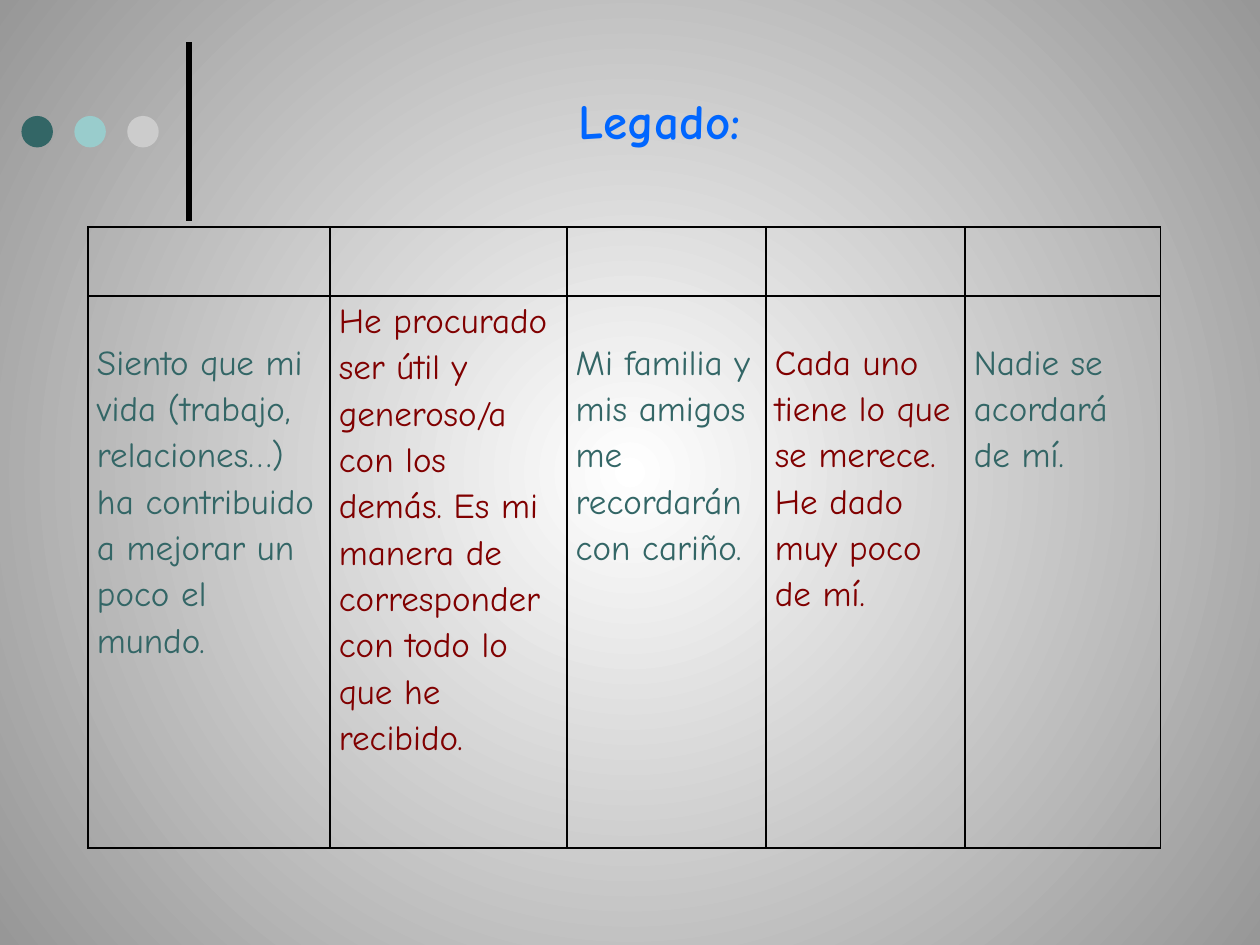
"""Build the "Legado" slide: a title, a dotted ornament and a five-column table."""
from lxml.etree import SubElement
from pptx import Presentation
from pptx.dml.color import RGBColor
from pptx.enum.shapes import MSO_CONNECTOR as Connector, MSO_SHAPE as Shape
from pptx.enum.text import MSO_ANCHOR as Anchor, PP_ALIGN as Align
from pptx.oxml import parse_xml
from pptx.oxml.ns import nsdecls, qn
from pptx.util import Inches, Pt

TEAL, MAROON, BLUE, BLACK = "336666", "800000", "0066FF", "000000"


def rgb(value):
    return RGBColor.from_string(value)


def write(frame, *lines, size=20, color=BLACK, bold=False, align=Align.LEFT, spacing=1.0):
    frame.word_wrap = True
    for index, line in enumerate(lines):
        para = frame.add_paragraph() if index else frame.paragraphs[0]
        para.alignment, para.line_spacing = align, spacing
        span = para.add_run()
        span.text = line
        span.font.name, span.font.size, span.font.bold = "Comic Neue", Pt(size), bold
        span.font.color.rgb = rgb(color)


deck = Presentation()
deck.slide_width, deck.slide_height = Inches(10), Inches(7.5)
page = deck.slides.add_slide(deck.slide_layouts[5])

backdrop = page.background.fill
backdrop.gradient()
for stop, (position, color) in zip(backdrop.gradient_stops, [(0, "FFFFFF"), (1, "979797")]):
    stop.position, stop.color.rgb = position, rgb(color)
linear = next(page.background._cSld.iter(qn("a:lin")))
linear.getparent().replace(linear, parse_xml(
    f'<a:path {nsdecls("a")} path="circle">'
    '<a:fillToRect l="50000" t="50000" r="50000" b="50000"/></a:path>'))

bar = page.shapes.add_connector(
    Connector.STRAIGHT, Inches(1.5), Inches(1.75), Inches(1.5), Inches(0.33))
bar.line.color.rgb, bar.line.width = rgb(BLACK), Pt(3)
SubElement(bar._element.spPr, qn("a:effectLst"))

for index, color in enumerate([TEAL, "99CCCC", "CCCCCC"]):
    dot = page.shapes.add_shape(
        Shape.OVAL, Inches(0.17 + 0.42 * index), Inches(0.92), Inches(0.25), Inches(0.25))
    dot.shadow.inherit = False
    dot.fill.solid()
    dot.fill.fore_color.rgb = rgb(color)
    dot.line.fill.background()

title = page.shapes.title
title.left, title.top, title.width, title.height = map(Inches, (0.47, 0.65, 9.53, 0.91))
title.text_frame.vertical_anchor = Anchor.TOP
title.text_frame.margin_top = Inches(0.07)
write(title.text_frame, "Legado:", size=28, color=BLUE, bold=True, align=Align.CENTER)

columns = [
    (1.92, 0.33, TEAL, ["Siento que mi vida (trabajo, relaciones…) ha contribuido "
                        "a mejorar un poco el mundo."]),
    (1.88, 0, MAROON, ["He procurado ser útil y generoso/a con los demás. Es mi manera "
                       "de corresponder con todo lo que he recibido."]),
    (1.58, 0.33, TEAL, ["Mi familia y mis amigos me recordarán con cariño."]),
    (1.58, 0.33, MAROON, ["Cada uno tiene lo que se merece.", "He dado muy poco de mí."]),
    (1.55, 0.33, TEAL, ["Nadie se acordará de mí."]),
]
table = page.shapes.add_table(
    2, len(columns), Inches(0.7), Inches(1.8), Inches(8.51), Inches(4.93)).table
table.first_row = table.horz_banding = False
for row, height in zip(table.rows, [0.55, 4.38]):
    row.height = Inches(height)
for index, (width, top_margin, color, lines) in enumerate(columns):
    table.columns[index].width = Inches(width)
    cell = table.cell(1, index)
    cell.margin_left = cell.margin_right = Inches(0.07)
    cell.margin_top, cell.margin_bottom = Inches(top_margin), 0
    write(cell.text_frame, *lines, color=color, spacing=1.15)
for cell in table.iter_cells():
    properties = cell._tc.get_or_add_tcPr()
    for side in ("lnL", "lnR", "lnT", "lnB"):
        properties.append(parse_xml(
            f'<a:{side} {nsdecls("a")} w="12700"><a:solidFill>'
            f'<a:srgbClr val="{BLACK}"/></a:solidFill></a:{side}>'))
    cell.fill.background()

deck.save("out.pptx")
